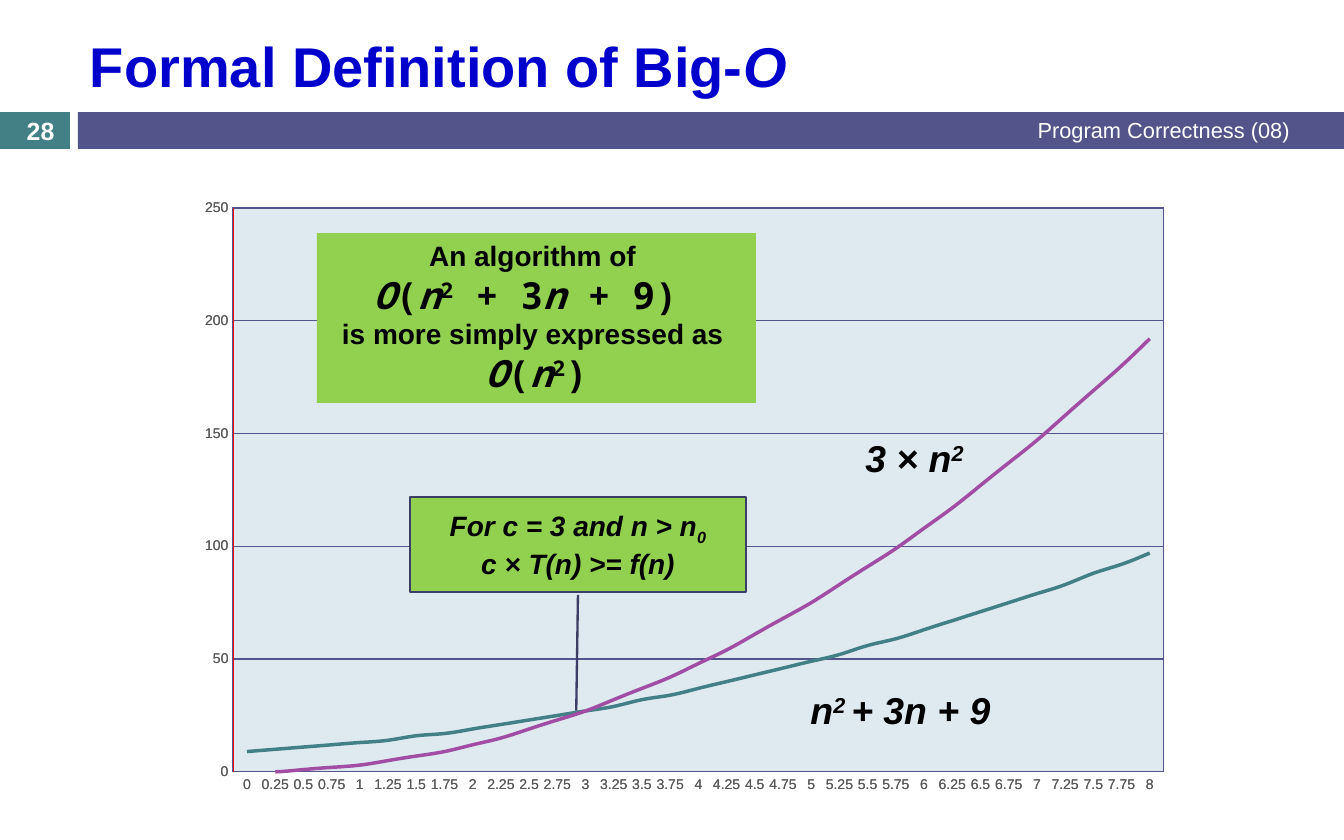
import pptx
import pptx.chart.data
import pptx.dml.color
import pptx.enum.chart
import pptx.enum.shapes
import pptx.enum.text
import pptx.oxml
import pptx.util

PX = 914400 // 112
HEX = {
    "teal": "438086", "indigo": "53548A", "purple": "A04DA3",
    "pale": "DEE9F0", "green": "92D050", "edge": "3D3E66",
    "title": "0000CC", "gray": "595959", "red": "FF0000",
    "white": "FFFFFF", "black": "000000",
}
COL = {name: pptx.dml.color.RGBColor.from_string(h) for name, h in HEX.items()}
KIND = pptx.enum.shapes.MSO_SHAPE
ALIGN = pptx.enum.text.PP_ALIGN
ANCHOR = pptx.enum.text.MSO_ANCHOR

deck = pptx.Presentation()
deck.slide_width, deck.slide_height = 1344 * PX, 840 * PX
slide = deck.slides.add_slide(deck.slide_layouts[6])


def block(box, fill, kind=KIND.RECTANGLE):
    shape = slide.shapes.add_shape(kind, *[n * PX for n in box])
    shape.shadow.inherit = False
    shape.fill.solid()
    shape.fill.fore_color.rgb = COL[fill]
    shape.line.fill.background()
    return shape


def write(shape, lines, color="black", align=ALIGN.CENTER, anchor=ANCHOR.MIDDLE):
    """Each line is a list of runs: text, size, style letters.

    b = bold, i = italic, m = monospaced, ^ = superscript, _ = subscript.
    """
    frame = shape.text_frame
    frame.word_wrap = True
    frame.vertical_anchor = anchor
    for k, line in enumerate(lines):
        para = frame.add_paragraph() if k else frame.paragraphs[0]
        para.alignment = align
        for text, size, style in line:
            run = para.add_run()
            run.text = text
            font = run.font
            font.name = "Noto Sans Mono" if "m" in style else "Arial"
            font.size = pptx.util.Pt(size)
            font.bold = "b" in style
            font.italic = "i" in style
            font.color.rgb = COL[color]
            for mark, base in (("^", "30000"), ("_", "-25000")):
                if mark in style:
                    run._r.get_or_add_rPr().set("baseline", base)


# Header bars
block((0, 112, 70, 37), "teal")
block((78, 112, 1266, 37), "indigo")

# Growth curves: f(n) alone, then f(n) together with its bound
NS = ('xmlns:c="http://schemas.openxmlformats.org/drawingml/2006/chart" '
      'xmlns:a="http://schemas.openxmlformats.org/drawingml/2006/main"')
steps = [k / 4 for k in range(33)]
curves = [
    ("Series 1", "teal", [round(n * n + 3 * n + 9) for n in steps]),
    ("Series 2", "purple", [round(3 * n * n) for n in steps]),
]
for shown in (curves[:1], curves):
    data = pptx.chart.data.CategoryChartData()
    data.categories = [f"{n:g}" for n in steps]
    for name, color, vals in shown:
        data.add_series(name, vals)
    chart = slide.shapes.add_chart(
        pptx.enum.chart.XL_CHART_TYPE.LINE,
        185 * PX, 187 * PX, 999 * PX, 616 * PX, data).chart
    chart.has_legend = False
    chart.has_title = False
    chart.font.name = "Arial"
    chart.font.size = pptx.util.Pt(10)
    chart.font.color.rgb = COL["black"]

    for series, (name, color, vals) in zip(chart.plots[0].series, shown):
        series.smooth = True
        series.marker.style = pptx.enum.chart.XL_MARKER_STYLE.NONE
        series.format.line.color.rgb = COL[color]
        series.format.line.width = pptx.util.Pt(2.25)

    cat, val = chart.category_axis, chart.value_axis
    for axis in (cat, val):
        axis.major_tick_mark = pptx.enum.chart.XL_TICK_MARK.NONE
        axis.minor_tick_mark = pptx.enum.chart.XL_TICK_MARK.NONE
        font = axis.tick_labels.font
        font.name = "Arial"
        font.size = pptx.util.Pt(9)
        font.color.rgb = COL["gray"]
        axis._element.txPr.bodyPr.set("rot", "-60000000")
    cat.format.line.fill.background()
    val.format.line.color.rgb = COL["red"]
    val.format.line.width = pptx.util.Pt(0.25)
    val.minimum_scale, val.maximum_scale, val.major_unit = 0, 250, 50
    grid = val.major_gridlines.format.line
    grid.color.rgb = COL["indigo"]
    grid.width = pptx.util.Pt(0.75)

    area = chart._chartSpace.chart.plotArea
    for old in area.xpath("c:layout"):
        area.remove(old)
    area.insert(0, pptx.oxml.parse_xml(
        f'<c:layout {NS}><c:manualLayout><c:layoutTarget val="inner"/>'
        '<c:xMode val="edge"/><c:yMode val="edge"/>'
        f'<c:x val="{48 / 999}"/><c:y val="{21 / 616}"/>'
        f'<c:w val="{931 / 999}"/><c:h val="{564 / 616}"/>'
        '</c:manualLayout></c:layout>'))
    area.append(pptx.oxml.parse_xml(
        f'<c:spPr {NS}><a:solidFill><a:srgbClr val="{HEX["pale"]}"/>'
        f'</a:solidFill><a:ln w="9525"><a:solidFill>'
        f'<a:srgbClr val="{HEX["indigo"]}"/></a:solidFill></a:ln></c:spPr>'))

# Title, footer, page number and curve labels
labels = [
    ((79, 20, 1222, 90), "title", ALIGN.LEFT, ANCHOR.MIDDLE,
     [("Formal Definition of Big-", 36, "b"), ("O", 36, "bi")]),
    ((691, 111, 610, 37), "white", ALIGN.RIGHT, ANCHOR.MIDDLE,
     [("Program Correctness (08)", 14, "")]),
    ((0, 114, 81, 34), "white", ALIGN.CENTER, ANCHOR.MIDDLE,
     [("28", 16, "b")]),
    ((839, 430, 151, 56), "black", ALIGN.CENTER, ANCHOR.TOP,
     [("3 × n", 24, "bi"), ("2", 24, "bi^")]),
    ((756, 682, 289, 56), "black", ALIGN.CENTER, ANCHOR.TOP,
     [("n", 24, "bi"), ("2 ", 24, "bi^"), ("+ 3n + 9", 24, "bi")]),
]
for box, color, align, anchor, runs in labels:
    text = slide.shapes.add_textbox(*[n * PX for n in box])
    write(text, [runs], color, align, anchor)

# Simplification note
square = [("O", 24, "bim"), ("(", 24, "bm"), ("n", 24, "bim"), ("2", 24, "bm^")]
note = block((317, 233, 439, 170), "green")
write(note, [
    [("An algorithm of ", 18, "b")],
    square + [(" + 3", 24, "bm"), ("n", 24, "bim"), (" + 9) ", 24, "bm")],
    [("is more simply expressed as ", 18, "b")],
    square + [(")", 24, "bm")],
], anchor=ANCHOR.TOP)

# Callout pointing at the crossing
call = block((410, 497, 336, 95), "green", KIND.LINE_CALLOUT_1)
call.line.color.rgb = COL["edge"]
call.line.width = pptx.util.Pt(1.5)
for k, ratio in enumerate((1.03, 0.5, 2.25, 0.495)):
    call.adjustments[k] = ratio
write(call, [
    [("For c = 3 and n > n", 18, "bi"), ("0", 18, "bi_")],
    [("c × T(n) >= f(n)", 18, "bi")],
])

deck.save("out.pptx")
